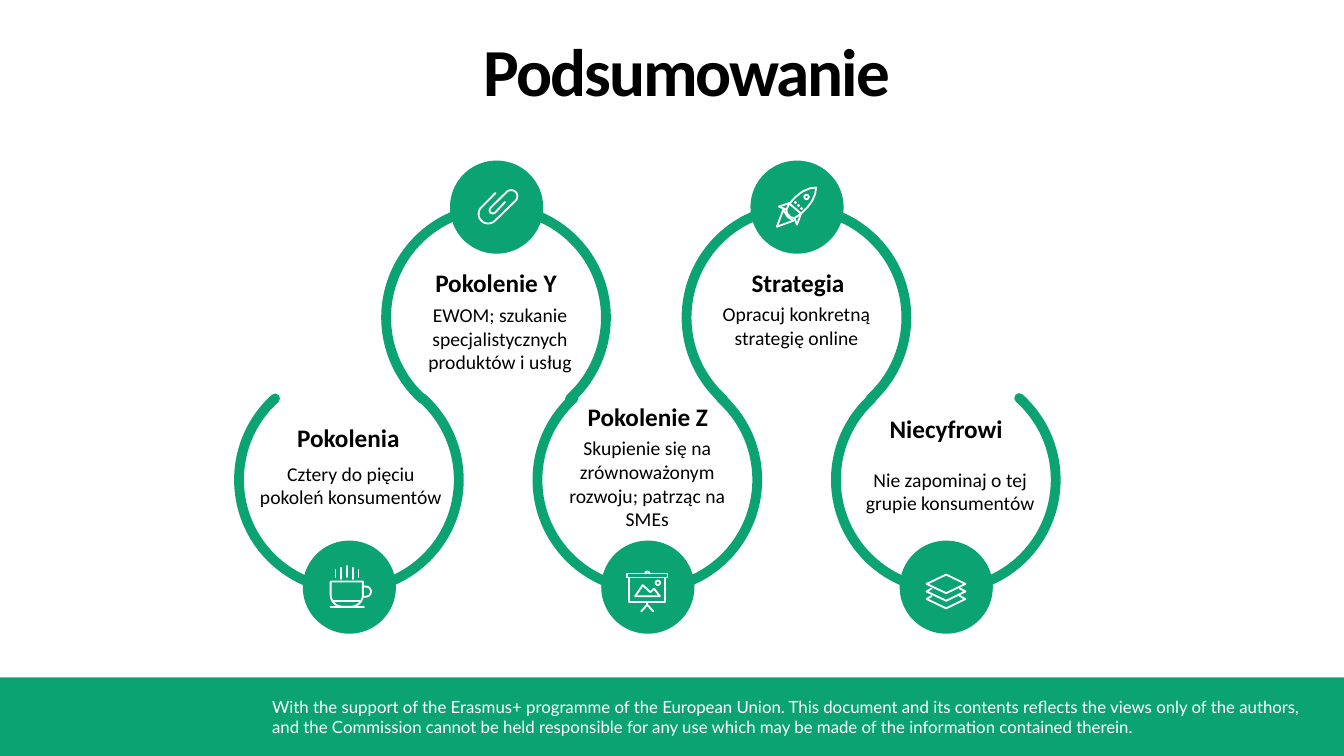
"""Build the summary slide with a chain of five linked rings."""
from dataclasses import dataclass
from math import cos, radians, sin

from pptx import Presentation
from pptx.dml.color import RGBColor
from pptx.enum.shapes import MSO_SHAPE
from pptx.enum.text import MSO_AUTO_SIZE, PP_ALIGN
from pptx.oxml.ns import qn
from pptx.util import Inches, Pt

ARC, OVAL, RECTANGLE = MSO_SHAPE.ARC, MSO_SHAPE.OVAL, MSO_SHAPE.RECTANGLE
CENTER, LEFT = PP_ALIGN.CENTER, PP_ALIGN.LEFT
GROW = MSO_AUTO_SIZE.SHAPE_TO_FIT_TEXT


@dataclass(frozen=True)
class Theme:
    """Colours, fonts and sizes in points."""
    green: RGBColor = RGBColor(0x0C, 0xA3, 0x73)
    white: RGBColor = RGBColor(0xFF, 0xFF, 0xFF)
    black: RGBColor = RGBColor(0, 0, 0)
    font: str = "Calibri"
    footer_font: str = "Lato"
    title: int = 48
    heading: int = 18
    body: int = 14
    footer: int = 12
    ring: float = 7
    badge: float = 1
    icon: float = 1.3


THEME = Theme()
RING_SIZE, BADGE_SIZE = 2.18, 0.91
RING_TOP = {True: 2.06, False: 3.67}
BADGE_TOP = {True: 1.6, False: 5.37}
FOOTER = (
    "With the support of the Erasmus+ programme of the European Union. This document "
    "and its contents reflects the views only of the authors, and the Commission cannot "
    "be held responsible for any use which may be made of the information contained therein."
)


def curve(x, y, radius, start, end, steps=16):
    """Return points along an arc, with angles clockwise from the right."""
    angles = [radians(start + (end - start) * step / steps) for step in range(steps + 1)]
    return [(x + radius * cos(angle), y + radius * sin(angle)) for angle in angles]


def rectangle(left, top, right, bottom):
    """Return the closed outline of a rectangle."""
    return [(left, top), (right, top), (right, bottom), (left, bottom), (left, top)]


def cup_icon():
    """Return the strokes of a steaming cup."""
    bowl = [(10, 290), (10, 160), (330, 160)]
    bowl += curve(210, 290, 120, 0, 90) + curve(130, 290, 120, 90, 180)
    handle = [(330, 210)] + curve(360, 260, 50, -90, 90) + [(330, 310)]
    steam_spans = ((45, 115), (25, 135), (5, 115), (25, 135), (45, 115))
    steam = [[(58 + 57 * index, top), (58 + 57 * index, bottom)]
             for index, (top, bottom) in enumerate(steam_spans)]
    return [bowl, handle, [(10, 410), (340, 410)], [(40, 350), (300, 350)], *steam]


def clip_icon():
    """Return the stroke of a paper clip."""
    return [[(185, 35), *curve(112, 243, 95, 225, 45), *curve(340, 68, 62, 45, -135),
             *curve(158, 206, 32, 225, 45), (280, 125)]]


def board_icon():
    """Return the strokes of a presentation board."""
    mountains = [(90, 255), (165, 145), (240, 215), (278, 180), (335, 255), (90, 255)]
    return [rectangle(10, 30, 410, 70), rectangle(30, 70, 390, 310), mountains,
            curve(315, 122, 22, 0, 360), curve(210, 30, 20, 180, 360),
            [(210, 310), (210, 340)], [(150, 405), (210, 340), (270, 405)]]


def rocket_icon():
    """Return the strokes of a rocket."""
    body = [(140, 170), (200, 105), (270, 50), (340, 20), (405, 10), (395, 75),
            (365, 145), (320, 205), (255, 270), (140, 170)]
    left_fin = [(140, 165), (35, 200), (110, 230), (140, 170)]
    right_fin = [(255, 270), (215, 380), (190, 315), (255, 270)]
    tail = [(110, 230), (115, 265), (150, 305), (190, 315)]
    flame = [(80, 230), (15, 400), (180, 340), (120, 300), (80, 230)]
    rivets = [curve(200 + 30 * index, 160 + 30 * index, 4, 0, 360) for index in range(3)]
    return [body, left_fin, right_fin, tail, flame, curve(310, 105, 22, 0, 360), *rivets]


def layers_icon():
    """Return the strokes of three stacked sheets."""
    sheet = [(10, 103), (205, 10), (395, 103), (205, 195), (10, 103)]
    edges = [[(60, y - 30), (10, y), (205, y + 92), (395, y), (340, y - 30)]
             for y in (178, 253)]
    return [sheet, *edges]


def add_shape(page, kind, left, top, width, height, fill=None, line=None, points=0):
    """Add a preset shape with a plain fill and outline."""
    shape = page.shapes.add_shape(kind, Inches(left), Inches(top), Inches(width), Inches(height))
    shape.shadow.inherit = False
    paint(shape, fill, line, points)
    return shape


def paint(shape, fill, line, points):
    """Set the fill and outline of a shape, either of them optional."""
    if fill is None:
        shape.fill.background()
    else:
        shape.fill.solid()
        shape.fill.fore_color.rgb = fill
    if line is None:
        shape.line.fill.background()
    else:
        shape.line.color.rgb = line
        shape.line.width = Pt(points)
        shape.element.spPr.find(qn("a:ln")).set("cap", "rnd")


def add_ring(page, left, upper):
    """Add an open ring with its badge."""
    ring = add_shape(page, ARC, left, RING_TOP[upper], RING_SIZE, RING_SIZE,
                     line=THEME.green, points=THEME.ring)
    ring.adjustments[0], ring.adjustments[1] = 79.141, 28.684
    ring.rotation = 0 if upper else 180
    add_shape(page, OVAL, left + 0.64, BADGE_TOP[upper], BADGE_SIZE, BADGE_SIZE,
              THEME.green, THEME.green, THEME.badge)


def add_icon(page, strokes, left, top):
    """Add a white line icon whose strokes are in thousandths of an inch."""
    builder = page.shapes.build_freeform(*strokes[0][0], scale=Inches(0.001))
    builder.add_line_segments(strokes[0][1:], close=False)
    for stroke in strokes[1:]:
        builder.move_to(*stroke[0])
        builder.add_line_segments(stroke[1:], close=False)
    icon = builder.convert_to_shape(Inches(left), Inches(top))
    icon.shadow.inherit = False
    paint(icon, None, THEME.white, THEME.icon)


def add_text(page, text, place, size, color=THEME.black, font=THEME.font,
             bold=False, align=CENTER, wrap=True):
    """Add a text box of one paragraph and return it."""
    box = page.shapes.add_textbox(*map(Inches, place))
    frame = box.text_frame
    frame.word_wrap = wrap
    frame.auto_size = GROW
    frame.text = text
    para = frame.paragraphs[0]
    para.alignment = align
    for span in para.runs:
        span.font.size = Pt(size)
        span.font.name = font
        span.font.bold = bold
        span.font.color.rgb = color
    return box


def add_title(page, text):
    """Add the tightly spaced slide title."""
    box = add_text(page, text, (4.8, 0.27, 4.11, 0.82), THEME.title, bold=True, align=LEFT)
    frame = box.text_frame
    frame.margin_left = frame.margin_right = frame.margin_bottom = 0
    frame.margin_top = Inches(0.02)
    frame.paragraphs[0].runs[0].font.element.set("spc", "-150") if hasattr(
        frame.paragraphs[0].runs[0].font, "element") else \
        frame.paragraphs[0]._p.r_lst[0].get_or_add_rPr().set("spc", "-150")


def main():
    """Build and save the slide."""
    deck = Presentation()
    deck.slide_width, deck.slide_height = Inches(13.33), Inches(7.5)
    page = deck.slides.add_slide(deck.slide_layouts[6])
    add_shape(page, RECTANGLE, 0, 6.72, 13.33, 0.78, THEME.green)
    add_text(page, FOOTER, (2.6, 6.86, 10.42, 0.5), THEME.footer,
             THEME.white, THEME.footer_font, align=LEFT)
    add_title(page, "Podsumowanie")
    stages = (
        (2.37, False, cup_icon(), (3.27, 5.61), "Pokolenia", (2.84, 4.14, 1.23, 0.4),
         "Cztery do pięciu pokoleń konsumentów", (2.48, 4.53, 2, 0.57)),
        (3.83, True, clip_icon(), (4.73, 1.88), "Pokolenie Y", (4.21, 2.6, 1.42, 0.4),
         "EWOM; szukanie specjalistycznych produktów i usług", (3.96, 2.96, 2, 0.81)),
        (5.33, False, board_icon(), (6.21, 5.66), "Pokolenie Z", (5.72, 3.93, 1.41, 0.4),
         "Skupienie się na zrównoważonym rozwoju; patrząc na SMEs", (5.42, 4.28, 2, 1.04)),
        (6.81, True, rocket_icon(), (7.69, 1.85), "Strategia", (7.35, 2.6, 1.13, 0.4),
         "Opracuj konkretną strategię online", (6.9, 2.95, 2, 0.57)),
        (8.29, False, layers_icon(), (9.18, 5.69), "Niecyfrowi", (8.72, 4.05, 1.33, 0.4),
         "Nie zapominaj o tej\vgrupie konsumentów", (8.29, 4.59, 2.27, 0.57)),
    )
    for left, upper, strokes, spot, heading, heading_place, body, body_place in stages:
        add_ring(page, left, upper)
        add_icon(page, strokes, *spot)
        add_text(page, body, body_place, THEME.body)
        add_text(page, heading, heading_place, THEME.heading, bold=True, wrap=False)
    deck.save("out.pptx")


if __name__ == "__main__":
    main()
